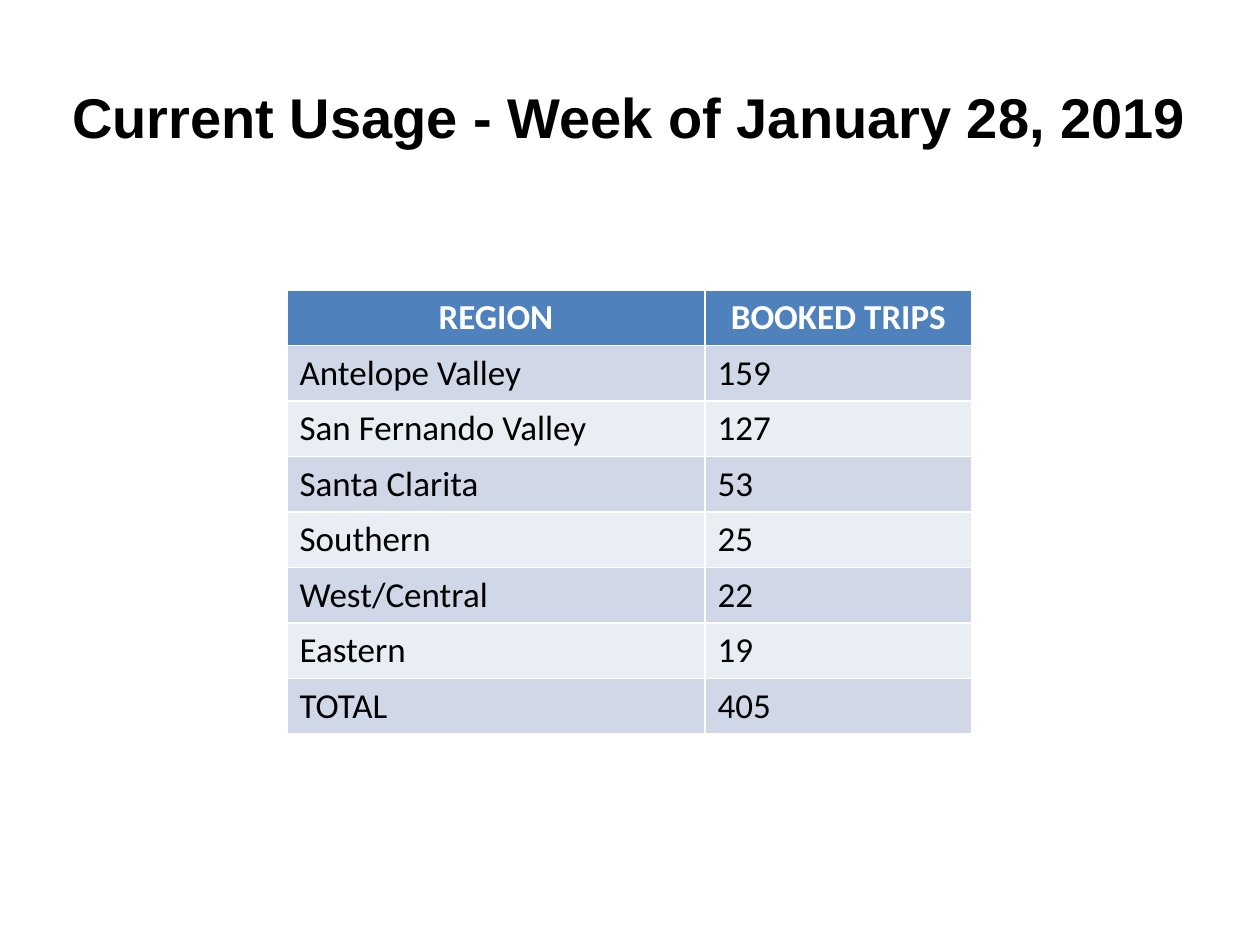
"""Build the weekly booked-trips slide."""
from pptx import Presentation
from pptx.dml.color import RGBColor
from pptx.enum.text import MSO_ANCHOR, PP_ALIGN
from pptx.util import Emu, Pt

BLACK = RGBColor(0x00, 0x00, 0x00)
WHITE = RGBColor(0xFF, 0xFF, 0xFF)
BLUE = RGBColor(0x4F, 0x81, 0xBD)
BANDS = (RGBColor(0xD0, 0xD8, 0xE8), RGBColor(0xE9, 0xED, 0xF4))
PX_PER_INCH = 126

TRIPS = [
    ("REGION", "BOOKED TRIPS"),
    ("Antelope Valley", "159"),
    ("San Fernando Valley", "127"),
    ("Santa Clarita", "53"),
    ("Southern", "25"),
    ("West/Central", "22"),
    ("Eastern", "19"),
    ("TOTAL", "405"),
]


def px(n):
    return Emu(round(n * 914400 / PX_PER_INCH))


class Deck:
    def __init__(self, width, height):
        self.prs = Presentation()
        self.prs.slide_width, self.prs.slide_height = px(width), px(height)
        self.s = self.prs.slides.add_slide(self.prs.slide_layouts[5])

    def set_text(self, tf, text, font, size, color, bold, align):
        tf.text = text
        p = tf.paragraphs[0]
        p.alignment = align
        r = p.runs[0]
        r.font.name, r.font.size, r.font.bold = font, Pt(size), bold
        r.font.color.rgb = color

    def title(self, text, x, y, w, h):
        sp = self.s.shapes.title
        sp.left, sp.top, sp.width, sp.height = map(px, (x, y, w, h))
        sp.text_frame.vertical_anchor = MSO_ANCHOR.MIDDLE
        self.set_text(sp.text_frame, text, "Arial", 32, BLACK, True, PP_ALIGN.CENTER)

    def table(self, rows, x, y, widths, row_h):
        size = (sum(widths), row_h * len(rows))
        frame = self.s.shapes.add_table(len(rows), len(widths), *map(px, (x, y, *size)))
        table = frame.table
        for col, w in zip(table.columns, widths):
            col.width = px(w)
        for i, row in enumerate(rows):
            head = i == 0
            align = PP_ALIGN.CENTER if head else PP_ALIGN.LEFT
            for j, text in enumerate(row):
                cell = table.cell(i, j)
                cell.fill.solid()
                cell.fill.fore_color.rgb = BLUE if head else BANDS[(i - 1) % 2]
                self.set_text(cell.text_frame, text, "Calibri", 20,
                              WHITE if head else BLACK, head, align)


def main():
    deck = Deck(1260, 945)
    deck.title("Current Usage - Week of January 28, 2019", 57, 76, 1145, 81)
    deck.table(TRIPS, 287, 290, (418, 267), 55)
    deck.prs.save("out.pptx")


if __name__ == "__main__":
    main()
